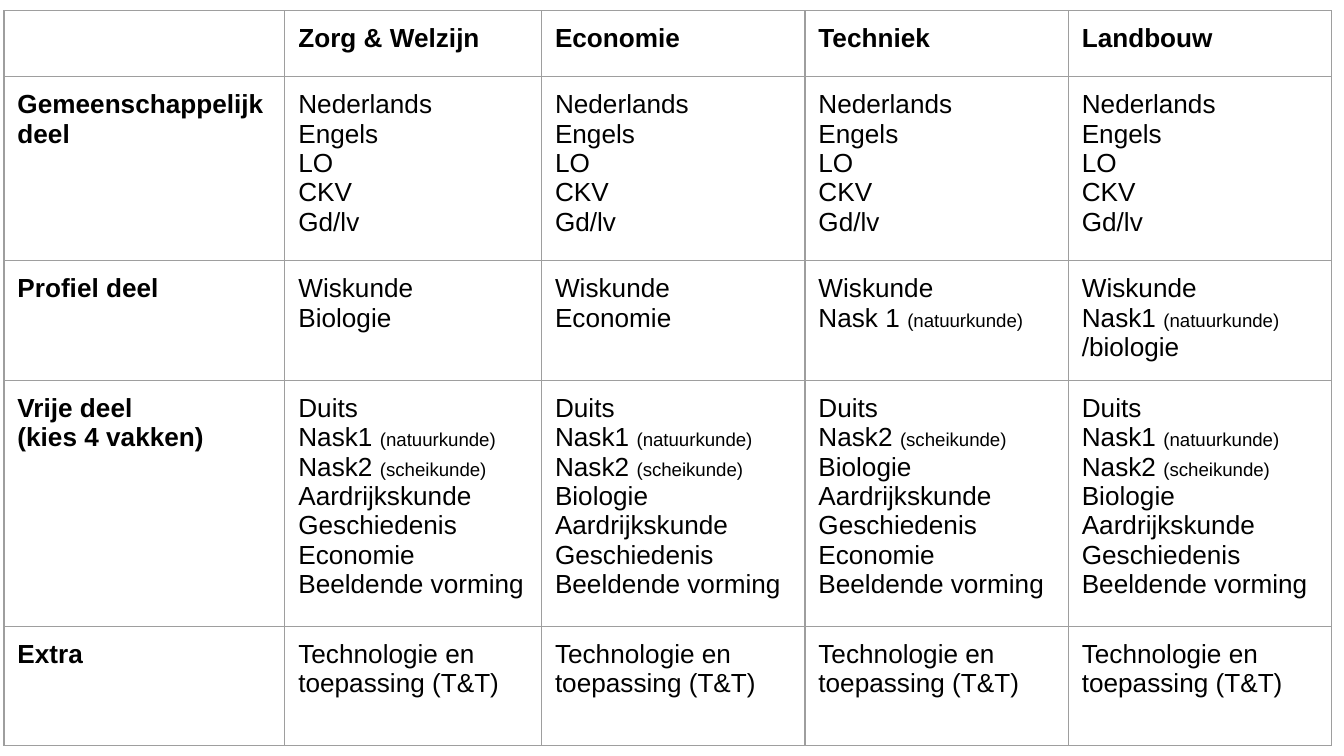
from pptx import Presentation
from pptx.dml.color import RGBColor
from pptx.oxml import parse_xml
from pptx.oxml.ns import nsdecls
from pptx.util import Inches, Pt

COLORS = {"text": "000000", "cell": "FFFFFF", "border": "9E9E9E"}
FONT = "Arial"
BODY_SIZE, NOTE_SIZE = 14, 10
BORDER_WIDTH = Pt(0.75)
MARGIN = Inches(0.1)
COLUMN_WIDTHS = [2.09, 1.91, 1.96, 1.96, 1.96]
ROW_HEIGHTS = [0.49, 1.37, 0.89, 1.83, 0.89]

PHYSICS = ("Nask1 ", "(natuurkunde)")
CHEMISTRY = ("Nask2 ", "(scheikunde)")
COMMON = ["Nederlands", "Engels", "LO", "CKV", "Gd/lv"]
EXTRA = ["Technologie en toepassing (T&T)"]
HUMANITIES = ["Aardrijkskunde", "Geschiedenis"]
ART = "Beeldende vorming"
BIOLOGY_CHOICE = ["Duits", PHYSICS, CHEMISTRY, "Biologie", *HUMANITIES, ART]

SUBJECTS = [
    [[], ["Zorg & Welzijn"], ["Economie"], ["Techniek"], ["Landbouw"]],
    [["Gemeenschappelijk deel"]] + [COMMON] * 4,
    [
        ["Profiel deel"],
        ["Wiskunde", "Biologie"],
        ["Wiskunde", "Economie"],
        ["Wiskunde", ("Nask 1 ", "(natuurkunde)")],
        ["Wiskunde", ("Nask1 ", "(natuurkunde) ", "/biologie")],
    ],
    [
        ["Vrije deel", "(kies 4 vakken)"],
        ["Duits", PHYSICS, CHEMISTRY, *HUMANITIES, "Economie", ART],
        BIOLOGY_CHOICE,
        ["Duits", CHEMISTRY, "Biologie", *HUMANITIES, "Economie", ART],
        BIOLOGY_CHOICE,
    ],
    [["Extra"]] + [EXTRA] * 4,
]


def style_cell(cell):
    """Give a cell its borders and fill."""
    properties = cell._tc.get_or_add_tcPr()
    for side in "LRTB":
        properties.append(parse_xml(
            f'<a:ln{side} {nsdecls("a")} w="{BORDER_WIDTH}"><a:solidFill>'
            f'<a:srgbClr val="{COLORS["border"]}"/></a:solidFill></a:ln{side}>'
        ))
    cell.fill.solid()
    cell.fill.fore_color.rgb = RGBColor.from_string(COLORS["cell"])


def write_cell(cell, lines, bold):
    """Write one paragraph per line; the second part of a line is a small note."""
    cell.margin_left = cell.margin_right = MARGIN
    cell.margin_top = cell.margin_bottom = MARGIN
    frame = cell.text_frame
    for index, line in enumerate(lines):
        para = frame.add_paragraph() if index else frame.paragraphs[0]
        parts = (line,) if isinstance(line, str) else line
        for position, text in enumerate(parts):
            span = para.add_run()
            span.text = text
            span.font.name = FONT
            span.font.size = Pt(NOTE_SIZE if position == 1 else BODY_SIZE)
            span.font.bold = bold
            span.font.color.rgb = RGBColor.from_string(COLORS["text"])


def add_subject_table(page, left, top):
    """Place the table of subjects per profile."""
    frame = page.shapes.add_table(
        len(ROW_HEIGHTS), len(COLUMN_WIDTHS), Inches(left), Inches(top),
        Inches(sum(COLUMN_WIDTHS)), Inches(sum(ROW_HEIGHTS)),
    )
    table = frame.table
    for column, width in zip(table.columns, COLUMN_WIDTHS):
        column.width = Inches(width)
    for row, height in zip(table.rows, ROW_HEIGHTS):
        row.height = Inches(height)
    for row_index, row in enumerate(SUBJECTS):
        for column_index, lines in enumerate(row):
            cell = table.cell(row_index, column_index)
            style_cell(cell)
            if lines:
                write_cell(cell, lines, row_index == 0 or column_index == 0)


def main():
    """Build the deck and save it."""
    deck = Presentation()
    deck.slide_width = Inches(10)
    deck.slide_height = deck.slide_width * 9 // 16
    page = deck.slides.add_slide(deck.slide_layouts[6])
    add_subject_table(page, 0.03, 0.08)
    deck.save("out.pptx")


if __name__ == "__main__":
    main()
